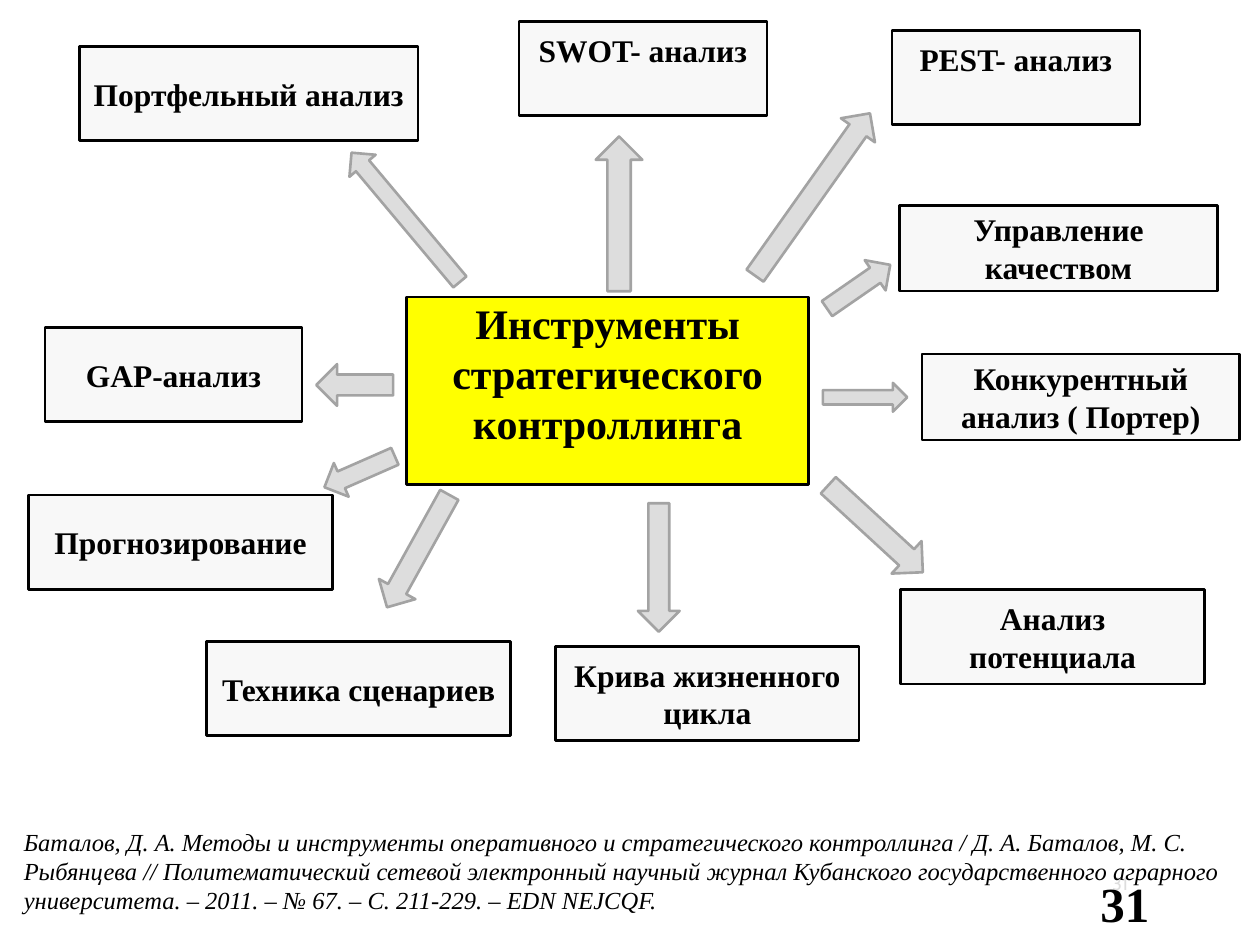
"""Build a slide mapping the tools of strategic controlling around a central box."""
import dataclasses

import pptx
import pptx.dml.color
import pptx.enum.shapes
import pptx.enum.text
import pptx.util

Cm = pptx.util.Cm
Pt = pptx.util.Pt
Align = pptx.enum.text.PP_ALIGN
Anchor = pptx.enum.text.MSO_ANCHOR
Preset = pptx.enum.shapes.MSO_SHAPE


@dataclasses.dataclass(frozen=True)
class Theme:
    serif: str = "Times New Roman"
    sans: str = "Cabin"
    ink: str = "000000"
    panel: str = "F8F8F8"
    accent: str = "FFFF00"
    arrow: str = "DDDDDD"
    arrow_edge: str = "A3A3A3"
    hub_size: int = 24
    tool_size: int = 18
    source_size: int = 14
    number_size: int = 28
    small_number_size: int = 10
    line_width: float = 1.5


class SlideBuilder:
    def __init__(self, page, theme):
        self.page = page
        self.theme = theme

    def shape(self, preset, left, top, width, height, fill, line):
        shape = self.page.shapes.add_shape(preset, Cm(left), Cm(top), Cm(width), Cm(height))
        shape.shadow.inherit = False
        shape.fill.solid()
        shape.fill.fore_color.rgb = pptx.dml.color.RGBColor.from_string(fill)
        shape.line.color.rgb = pptx.dml.color.RGBColor.from_string(line)
        shape.line.width = Pt(self.theme.line_width)
        return shape

    def set_text(self, shape, text, size, align, anchor, color=None, name=None, bold=False, italic=False):
        frame = shape.text_frame
        frame.word_wrap = True
        frame.vertical_anchor = anchor
        para = frame.paragraphs[0]
        para.text = text
        para.alignment = align
        font = para.font
        font.name = name or self.theme.serif
        font.size = Pt(size)
        font.bold = bold
        font.italic = italic
        font.color.rgb = pptx.dml.color.RGBColor.from_string(color or self.theme.ink)

    def box(self, text, left, top, width, height=1.9, raised=False, fill=None, size=None):
        box = self.shape(Preset.RECTANGLE, left, top, width, height,
                         fill or self.theme.panel, self.theme.ink)
        self.set_text(box, text, size or self.theme.tool_size, Align.CENTER, Anchor.MIDDLE, bold=True)
        if raised:
            box.text_frame.margin_bottom = Cm(0.86)

    def arrow(self, center_x, center_y, length, thickness, angle):
        arrow = self.shape(Preset.RIGHT_ARROW, center_x - length / 2, center_y - thickness / 2,
                           length, thickness, self.theme.arrow, self.theme.arrow_edge)
        arrow.rotation = angle

    def label(self, text, left, top, width, height, size, align=Align.LEFT, anchor=Anchor.TOP, **style):
        label = self.page.shapes.add_textbox(Cm(left), Cm(top), Cm(width), Cm(height))
        self.set_text(label, text, size, align, anchor, **style)


TOOLS = [
    ("GAP-анализ", 0.91, 6.6, 5.18),
    ("Портфельный анализ", 1.6, 0.94, 6.83),
    ("SWOT- анализ", 10.46, 0.43, 5, 1.9, True),
    ("PEST- анализ", 17.98, 0.61, 5, 1.9, True),
    ("Управление качеством", 18.14, 4.14, 6.4, 1.73),
    ("Конкурентный анализ ( Портер)", 18.59, 7.14, 6.4, 1.73),
    ("Прогнозирование", 0.58, 9.98, 6.12),
    ("Техника сценариев", 4.17, 12.93, 6.12),
    ("Крива жизненного цикла", 11.2, 13.03, 6.12),
    ("Анализ потенциала", 18.16, 11.89, 6.12),
]

ARROWS = [
    (8.18, 4.38, 3.4, 0.69, 230),
    (12.48, 4.31, 3.12, 0.94, 270),
    (16.38, 3.92, 4.01, 0.84, 305.3),
    (7.15, 7.76, 1.55, 0.84, 180),
    (7.25, 9.51, 1.55, 0.74, 156.3),
    (8.43, 11.11, 2.59, 0.84, 119),
    (13.28, 11.44, 2.59, 0.84, 90),
    (17.65, 10.66, 2.59, 0.89, 42.6),
    (17.31, 5.78, 1.55, 0.74, 325.3),
    (17.44, 8.01, 1.7, 0.58, 0),
]

SOURCE = (
    "Баталов, Д. А. Методы и инструменты оперативного и стратегического контроллинга / "
    "Д. А. Баталов, М. С. Рыбянцева // Политематический сетевой электронный научный журнал "
    "Кубанского государственного аграрного университета. – 2011. – № 67. – С. 211-229. – EDN NEJCQF."
)


def main():
    theme = Theme()
    deck = pptx.Presentation()
    deck.slide_width, deck.slide_height = Cm(25.4), Cm(19.05)
    builder = SlideBuilder(deck.slides.add_slide(deck.slide_layouts[6]), theme)

    builder.label("31", 19.43, 17.3, 3.56, 1.02, theme.small_number_size, Align.RIGHT,
                  Anchor.MIDDLE, color=theme.arrow, name=theme.sans)
    for tool in TOOLS:
        builder.box(*tool)
    builder.box("Инструменты стратегического контроллинга", 8.2, 5.99, 8.1, 3.78,
                raised=True, fill=theme.accent, size=theme.hub_size)
    for arrow in ARROWS:
        builder.arrow(*arrow)
    builder.label(SOURCE, 0.23, 16.54, 24.94, 2.06, theme.source_size, italic=True)
    builder.label("31", 19.86, 17.7, 3.56, 1.02, theme.number_size, Align.RIGHT,
                  Anchor.MIDDLE, bold=True)
    deck.save("out.pptx")


if __name__ == "__main__":
    main()
